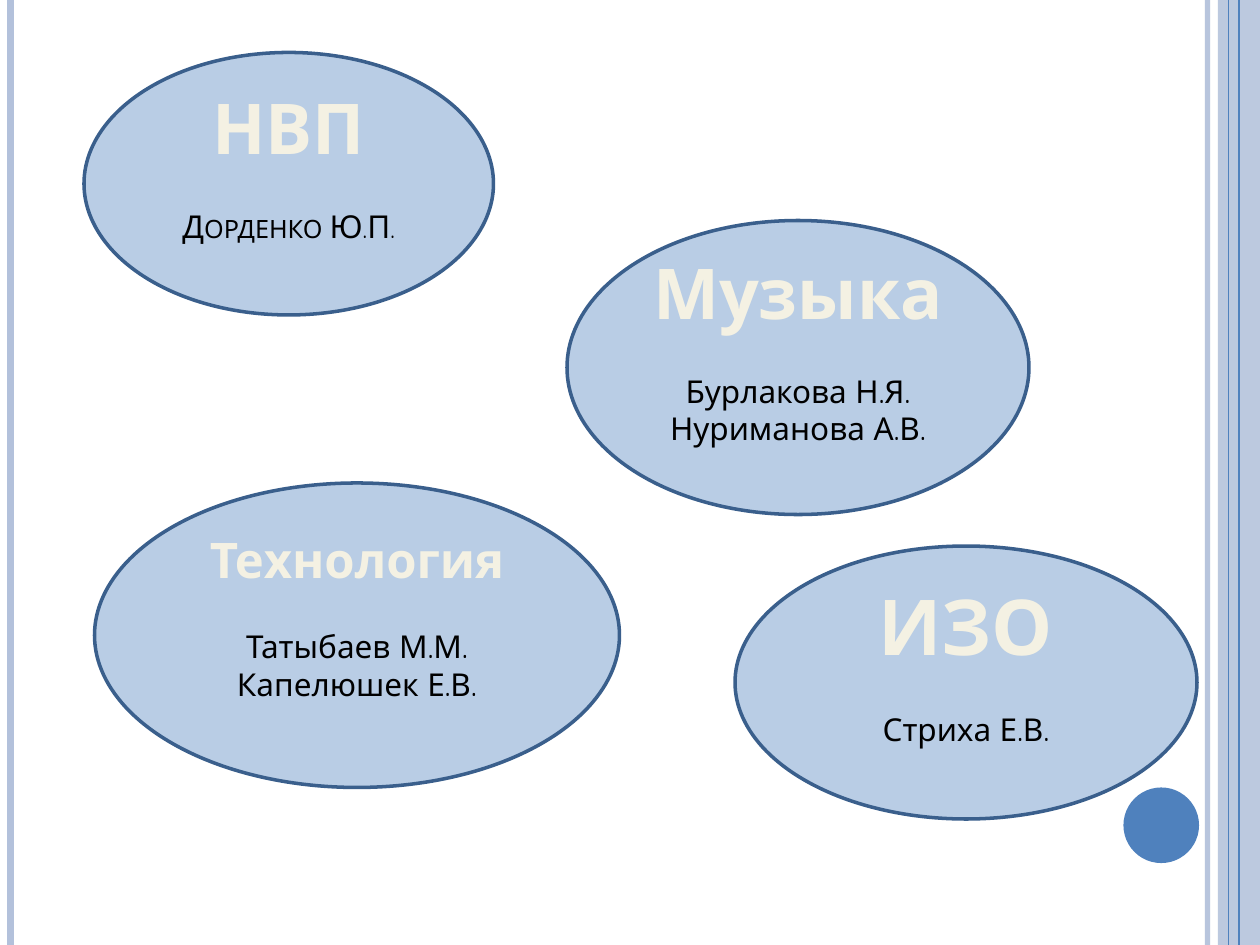
from lxml.etree import SubElement
from pptx import Presentation
from pptx.dml.color import RGBColor
from pptx.enum.shapes import MSO_CONNECTOR as Line, MSO_SHAPE as Shape
from pptx.enum.text import MSO_ANCHOR as Anchor, PP_ALIGN as Align
from pptx.oxml import parse_xml
from pptx.oxml.ns import nsdecls, qn
from pptx.util import Pt

PALE = RGBColor(0xB3, 0xC1, 0xDB)
BLUE = RGBColor(0x4F, 0x81, 0xBD)
SKY = RGBColor(0xB9, 0xCD, 0xE5)
NAVY = RGBColor(0x3A, 0x5F, 0x8C)
CREAM = RGBColor(0xF4, 0xF1, 0xE3)
BLACK = RGBColor(0, 0, 0)
EDGE = "054697"
FONT = "Quicksand"
WIDE, HIGH = 720, 540
GAP = 22  # one line of 18 pt text

# x, width, colour, opacity in percent
RULES = [
    (690, 3, PALE, 93),
    (6, 4.5, PALE, 100),
    (708, 1.5, BLUE, 100),
    (702, 0.75, BLUE, 100),
]
BAND = (696, 0, 24, HIGH)
DOT = (642, 450, 43.2, 43.2)

# subject, size, teachers, small caps, box
SUBJECTS = [
    ("Музыка", 40, ["Бурлакова Н.Я.", "Нуриманова А.В."], False, (324, 126, 264, 168)),
    ("НВП", 40, ["Дорденко Ю.П."], True, (48, 30, 234, 150)),
    ("ИЗО", 44, ["Стриха Е.В."], False, (420, 312, 264, 156)),
    ("Технология", 28, ["Татыбаев М.М.", "Капелюшек Е.В."], False, (54, 276, 300, 174)),
]


def fade(part, alpha):
    """Make the solid colour inside part partly transparent."""
    for tone in part.iter(qn("a:srgbClr")):
        SubElement(tone, qn("a:alpha")).set("val", str(alpha * 1000))


def add_rule(shapes, x, width, color, alpha):
    rule = shapes.add_connector(Line.STRAIGHT, Pt(x), 0, Pt(x), Pt(HIGH))
    rule.line.width = Pt(width)
    rule.line.color.rgb = color
    props = rule._element.spPr
    if alpha < 100:
        fade(props, alpha)
    SubElement(props, qn("a:effectLst"))


def add_solid(shapes, kind, box, color):
    solid = shapes.add_shape(kind, *map(Pt, box))
    solid.shadow.inherit = False
    solid.fill.solid()
    solid.fill.fore_color.rgb = color
    solid.line.fill.background()
    return solid


def style(para, size, color, bold):
    para.alignment = Align.CENTER
    font = para.runs[0].font
    font.name, font.size, font.bold = FONT, Pt(size), bold
    font.color.rgb = color
    return para.runs[0]._r.get_or_add_rPr()


def add_subject(shapes, title, size, names, small, box):
    oval = add_solid(shapes, Shape.OVAL, box, SKY)
    oval.line.color.rgb = NAVY
    oval.line.width = Pt(2)
    frame = oval.text_frame
    frame.word_wrap = True
    frame.vertical_anchor = Anchor.MIDDLE
    frame.margin_bottom = Pt(3.6 + GAP)
    frame.text = "\n".join([title, *names])
    head, *rest = frame.paragraphs
    props = style(head, size, CREAM, True)
    props.insert(0, parse_xml(
        f'<a:ln {nsdecls("a")} w="12700"><a:solidFill>'
        f'<a:srgbClr val="{EDGE}"/></a:solidFill></a:ln>'))
    for para in rest:
        props = style(para, 18, BLACK, False)
        if small:
            props.set("cap", "small")
    rest[0].space_before = Pt(GAP)


def main():
    deck = Presentation()
    deck.slide_width, deck.slide_height = Pt(WIDE), Pt(HIGH)
    shapes = deck.slides.add_slide(deck.slide_layouts[6]).shapes
    band = add_solid(shapes, Shape.RECTANGLE, BAND, PALE)
    fade(band._element.spPr, 87)
    for rule in RULES:
        add_rule(shapes, *rule)
    add_solid(shapes, Shape.OVAL, DOT, BLUE)
    for subject in SUBJECTS:
        add_subject(shapes, *subject)
    deck.save("out.pptx")


if __name__ == "__main__":
    main()
